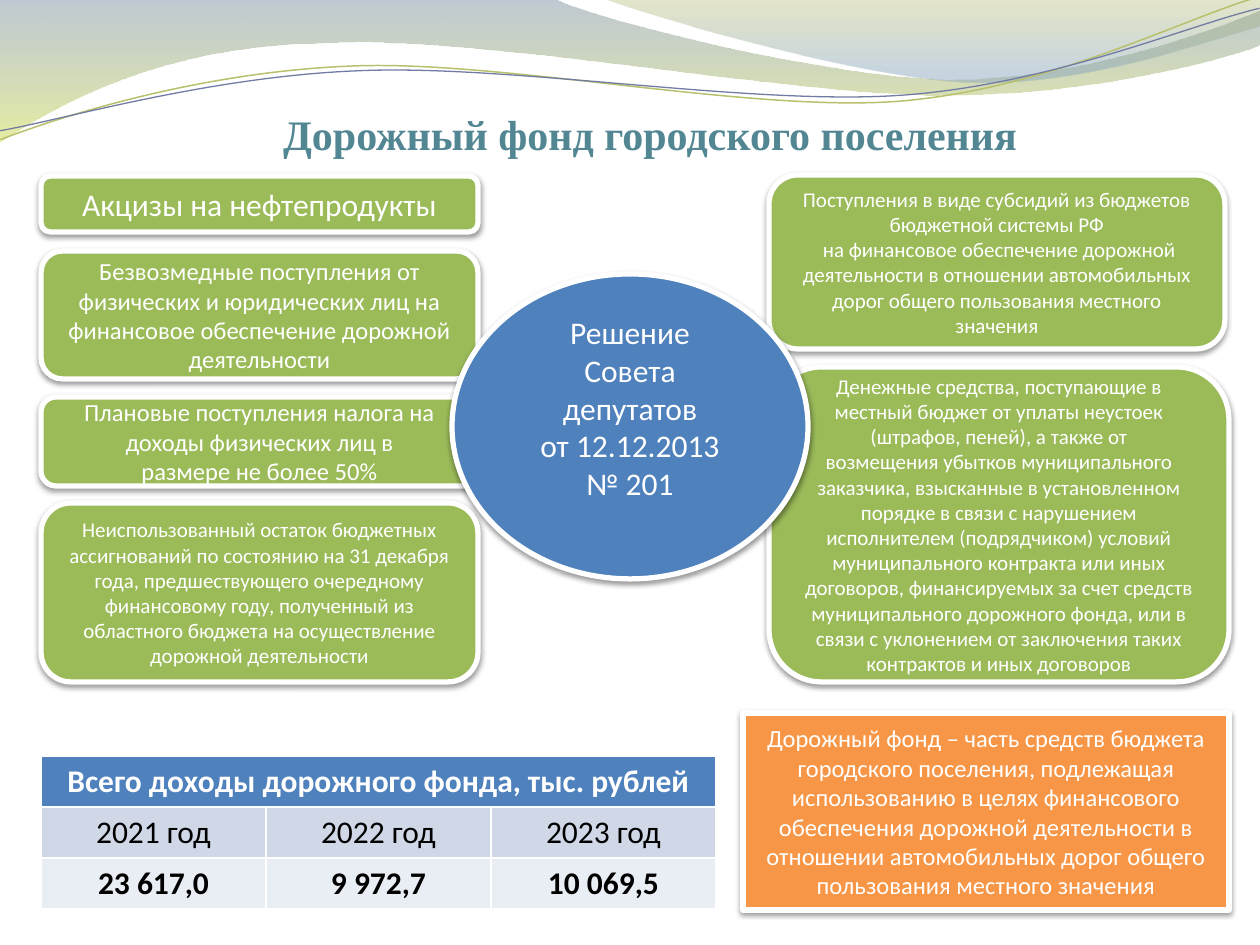
from pptx import Presentation
from pptx.dml.color import RGBColor
from pptx.enum.shapes import MSO_SHAPE
from pptx.enum.text import MSO_ANCHOR, PP_ALIGN
from pptx.oxml import parse_xml
from pptx.util import Pt

RECT, ROUND, OVAL = MSO_SHAPE.RECTANGLE, MSO_SHAPE.ROUNDED_RECTANGLE, MSO_SHAPE.OVAL
MIDDLE, CENTER = MSO_ANCHOR.MIDDLE, PP_ALIGN.CENTER
PX = 914400 / 126
NS = 'xmlns:a="http://schemas.openxmlformats.org/drawingml/2006/main"'
WHITE, GREEN, BLUE, ORANGE = "FFFFFF", "9BBB59", "4F81BD", "F79646"
rgb = RGBColor.from_string


def emu(*lengths):
    return [round(n * PX) for n in lengths]


def write(frame, paragraphs, color, **font_format):
    frame.word_wrap = True
    for i, text in enumerate(paragraphs):
        paragraph = frame.paragraphs[0] if i == 0 else frame.add_paragraph()
        paragraph.text = text
        paragraph.alignment = CENTER
        for key, value in font_format.items():
            setattr(paragraph.font, key, value)
        paragraph.font.color.rgb = rgb(color)


prs = Presentation()
prs.slide_width, prs.slide_height = emu(1260, 945)
slide = prs.slides.add_slide(prs.slide_layouts[6])
shapes = slide.shapes

# Waves along the top: pairs are corners, sixes are Bezier curves
# Gradient stops: position %, colour, opacity %
waves = [
    ([(0, 0), (554, -1), (600, 21, 837, 79, 955, 79), (1075, 79, 1207, 33, 1260, 11),
      (1261, 45), (1239, 55, 1096, 96, 940, 95), (784, 95, 481, 35, 324, 43),
      (161, 45, 58, 105, -1, 142)],
     [(0, "72889B", 45), (100, "D3DE57", 55)], None),
    ([(604, -1), (641, 14, 859, 78, 969, 82), (1079, 87, 1211, 40, 1260, 26), (1260, 0)],
     [(0, "A4AC50", 30), (80, "84A3BD", 45)], None),
    ([(-2, 110), (58, 90, 199, 52, 350, 53), (499, 53, 745, 118, 896, 114),
      (1049, 109, 1184, 45, 1260, 27)], None, ("B9C06C", 0.85)),
    ([(-2, 101), (57, 94, 207, 57, 357, 58), (509, 58, 750, 112, 902, 108),
      (1052, 104, 1188, 52, 1262, 38)], None, ("727CA3", 0.75)),
]
for (start, *segments), stops, stroke in waves:
    points = [emu(*segment[i:i + 2]) for segment in segments
              for i in range(0, len(segment), 2)]
    outline = shapes.build_freeform(*emu(*start))
    outline.add_line_segments(points, close=bool(stops))
    wave = outline.convert_to_shape()
    steps = iter(list(wave._element.iter("{*}lnTo")))
    for segment in segments:
        step = next(steps)
        if len(segment) == 6:
            step.tag = step.tag.replace("lnTo", "cubicBezTo")
            for extra in (next(steps), next(steps)):
                step.append(extra[0])
                extra.getparent().remove(extra)
    wave.shadow.inherit = False
    wave.fill.background()
    if stops:
        wave.line.fill.background()
        stop_xml = "".join(
            f'<a:gs pos="{pos * 1000}"><a:srgbClr val="{color}">'
            f'<a:alpha val="{alpha * 1000}"/></a:srgbClr></a:gs>'
            for pos, color, alpha in stops)
        no_fill = wave.fill._xPr.find("{*}noFill")
        no_fill.getparent().replace(no_fill, parse_xml(
            f'<a:gradFill {NS}><a:gsLst>{stop_xml}</a:gsLst>'
            '<a:lin ang="5400000" scaled="0"/></a:gradFill>'))
    else:
        wave.rotation = 357.3
        wave.line.color.rgb = rgb(stroke[0])
        wave.line.width = Pt(stroke[1])

# Title
title = shapes.add_textbox(*emu(74, 102, 1152, 63))
write(title.text_frame, ["Дорожный фонд городского поселения"], "528693",
      name="Times New Roman", size=Pt(24), bold=True)

# Definition, income sources and the council decision
cards = [
    (RECT, (743, 713, 486, 197), ORANGE, 14, [
        "Дорожный фонд – часть средств бюджета городского поселения, подлежащая "
        "использованию в целях финансового обеспечения дорожной деятельности в "
        "отношении автомобильных дорог общего пользования местного значения"]),
    (ROUND, (41, 176, 437, 56), GREEN, 18, ["Акцизы на нефтепродукты"]),
    (ROUND, (41, 251, 437, 128), GREEN, 14, [
        "Безвозмедные поступления от физических и юридических лиц на финансовое "
        "обеспечение дорожной деятельности"]),
    (ROUND, (41, 397, 437, 89), GREEN, 14, [
        "Плановые поступления налога на доходы физических лиц в\n"
        "размере не более 50%"]),
    (ROUND, (41, 503, 437, 179), GREEN, 12, [
        "Неиспользованный остаток бюджетных ассигнований по состоянию на 31 декабря "
        "года, предшествующего очередному финансовому году, полученный из областного "
        "бюджета на осуществление дорожной деятельности"]),
    (ROUND, (769, 175, 456, 174), GREEN, 12, [
        "Поступления в виде субсидий из бюджетов бюджетной системы РФ",
        " на финансовое обеспечение дорожной деятельности в отношении автомобильных "
        "дорог общего пользования местного значения"]),
    (ROUND, (769, 367, 460, 315), GREEN, 12, [
        "Денежные средства, поступающие в местный бюджет от уплаты неустоек "
        "(штрафов, пеней), а также от\n"
        "возмещения убытков муниципального заказчика, взысканные в установленном "
        "порядке в связи с нарушением исполнителем (подрядчиком) условий "
        "муниципального контракта или иных договоров, финансируемых за счет средств "
        "муниципального дорожного фонда, или в связи с уклонением от заключения "
        "таких контрактов и иных договоров"]),
    (OVAL, (452, 274, 356, 305), BLUE, 18, [
        "Решение\nСовета депутатов\nот 12.12.2013", "№ 201"]),
]
for kind, box, color, size, paragraphs in cards:
    card = shapes.add_shape(kind, *emu(*box))
    card.fill.solid()
    card.fill.fore_color.rgb = rgb(color)
    card.line.color.rgb = rgb(WHITE)
    card.line.width = Pt(3)
    card.shadow.inherit = False
    card.fill._xPr.find("{*}effectLst").append(parse_xml(
        f'<a:outerShdw {NS} blurRad="{Pt(3.1)}" dist="{Pt(1.6)}" dir="5400000" '
        'rotWithShape="0"><a:srgbClr val="000000"><a:alpha val="38000"/>'
        '</a:srgbClr></a:outerShdw>'))
    card.text_frame.vertical_anchor = MIDDLE
    write(card.text_frame, paragraphs, WHITE, name="Calibri", size=Pt(size))
card.text_frame.margin_bottom = emu(44)[0]  # lifts the decision text in the oval

# Income table: texts, fill, font colour, bold; the table style draws the white rules
income_rows = [
    (["Всего доходы дорожного фонда, тыс. рублей"], BLUE, WHITE, True),
    (["2021 год", "2022 год", "2023 год"], "D0D8E8", "000000", False),
    (["23 617,0", "9 972,7", "10 069,5"], "E9EDF4", "000000", True),
]
income = shapes.add_table(3, 3, *emu(41, 756, 675, 153)).table
income.cell(0, 0).merge(income.cell(0, 2))
for r, (texts, fill, color, bold) in enumerate(income_rows):
    for c, text in enumerate(texts):
        cell = income.cell(r, c)
        cell.fill.solid()
        cell.fill.fore_color.rgb = rgb(fill)
        write(cell.text_frame, [text], color, name="Calibri", size=Pt(18), bold=bold)

prs.save("out.pptx")
